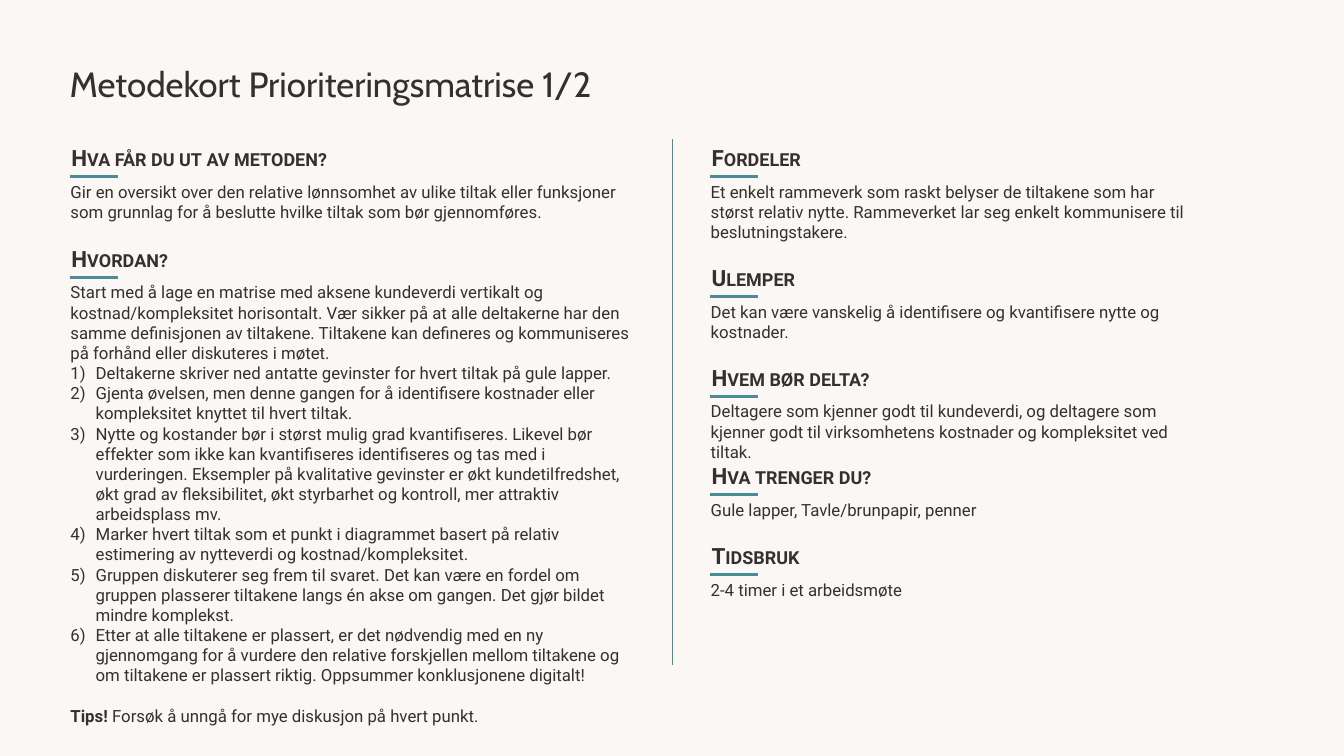
from lxml import etree
from pptx import Presentation
from pptx.dml.color import RGBColor
from pptx.enum.shapes import MSO_CONNECTOR
from pptx.enum.text import MSO_ANCHOR
from pptx.oxml.ns import qn
from pptx.util import Inches, Pt

STRAIGHT = MSO_CONNECTOR.STRAIGHT
MIDDLE = MSO_ANCHOR.MIDDLE
COLORS = {"background": "FBF7F5", "text": "333030", "accent": "4B8B95"}

LEFT_COLUMN, RIGHT_COLUMN = 0.6, 6.95
LEFT_WIDTH, RIGHT_WIDTH = 5.78, 4.91
HEADING_WIDTH, HEADING_HEIGHT = 4.91, 0.37

BENEFIT = (
    "Gir en oversikt over den relative lønnsomhet av ulike tiltak eller funksjoner "
    "som grunnlag for å beslutte hvilke tiltak som bør gjennomføres."
)
INTRO = (
    "Start med å lage en matrise med aksene kundeverdi vertikalt og "
    "kostnad/kompleksitet horisontalt. Vær sikker på at alle deltakerne har den "
    "samme definisjonen av tiltakene. Tiltakene kan defineres og kommuniseres "
    "på forhånd eller diskuteres i møtet."
)
STEPS = [
    "Deltakerne skriver ned antatte gevinster for hvert tiltak på gule lapper.",
    "Gjenta øvelsen, men denne gangen for å identifisere kostnader eller "
    "kompleksitet knyttet til hvert tiltak.",
    "Nytte og kostander bør i størst mulig grad kvantifiseres. Likevel bør "
    "effekter som ikke kan kvantifiseres identifiseres og tas med i "
    "vurderingen. Eksempler på kvalitative gevinster er økt kundetilfredshet, "
    "økt grad av fleksibilitet, økt styrbarhet og kontroll, mer attraktiv "
    "arbeidsplass mv.",
    "Marker hvert tiltak som et punkt i diagrammet basert på relativ "
    "estimering av nytteverdi og kostnad/kompleksitet.",
    "Gruppen diskuterer seg frem til svaret. Det kan være en fordel om "
    "gruppen plasserer tiltakene langs én akse om gangen. Det gjør bildet "
    "mindre komplekst.",
    "Etter at alle tiltakene er plassert, er det nødvendig med en ny "
    "gjennomgang for å vurdere den relative forskjellen mellom tiltakene og "
    "om tiltakene er plassert riktig. Oppsummer konklusjonene digitalt!",
]
RIGHT_SECTIONS = [
    (1.38, 0.71, "Fordeler",
     "Et enkelt rammeverk som raskt belyser de tiltakene som har størst relativ "
     "nytte. Rammeverket lar seg enkelt kommunisere til beslutningstakere."),
    (2.57, 0.5, "Ulemper",
     "Det kan være vanskelig å identifisere og kvantifisere nytte og kostnader."),
    (3.56, 0.5, "Hvem bør delta?",
     "Deltagere som kjenner godt til kundeverdi, og deltagere som kjenner godt "
     "til virksomhetens kostnader og kompleksitet ved tiltak."),
    (4.54, 0.3, "Hva trenger du?", "Gule lapper, Tavle/brunpapir, penner"),
    (5.33, 0.3, "Tidsbruk", "2-4 timer i et arbeidsmøte"),
]


def write(paragraph, text, size=12, font="Roboto", bold=False, small_caps=False):
    run = paragraph.add_run()
    run.text = text
    run.font.size = Pt(size)
    run.font.name = font
    run.font.bold = bold
    run.font.color.rgb = RGBColor.from_string(COLORS["text"])
    if small_caps:
        run.font._element.set("cap", "small")


def add_frame(slide, left, top, width, height):
    box = slide.shapes.add_textbox(
        Inches(left), Inches(top), Inches(width), Inches(height))
    box.text_frame.word_wrap = True
    return box.text_frame


def add_line(slide, start, end, weight):
    line = slide.shapes.add_connector(
        STRAIGHT, *(Inches(value) for value in (*start, *end)))
    line.line.color.rgb = RGBColor.from_string(COLORS["accent"])
    line.line.width = Pt(weight)
    etree.SubElement(line._element.spPr, qn("a:effectLst"))


def add_title(slide, text):
    frame = add_frame(slide, 0.69, 0.62, 11.95, 0.42)
    frame.margin_left = frame.margin_right = 0
    frame.margin_top = frame.margin_bottom = 0
    frame.vertical_anchor = MIDDLE
    frame.paragraphs[0].line_spacing = Pt(30)
    write(frame.paragraphs[0], text, size=25, font="Cabin")


def add_section(slide, left, top, width, height, heading, body):
    heading_frame = add_frame(slide, left + 0.01, top, HEADING_WIDTH, HEADING_HEIGHT)
    write(heading_frame.paragraphs[0], heading, size=16, bold=True, small_caps=True)
    body_top = top + HEADING_HEIGHT
    body_frame = add_frame(slide, left, body_top, width, height)
    write(body_frame.paragraphs[0], body)
    add_line(slide, (left + 0.09, body_top), (left + 0.57, body_top), 2.25)
    return body_frame


def add_step(frame, text):
    step = frame.add_paragraph()
    properties = step._p.get_or_add_pPr()
    properties.set("marL", str(Inches(0.25)))
    properties.set("indent", str(Inches(-0.25)))
    numbering = etree.SubElement(properties, qn("a:buAutoNum"))
    numbering.set("type", "arabicParenR")
    write(step, text)


def add_tip(frame, label, text):
    tip = frame.add_paragraph()
    tip.space_before = Pt(14.4)
    write(tip, label, bold=True)
    write(tip, text)


def main():
    deck = Presentation()
    deck.slide_width = Inches(13.33)
    deck.slide_height = Inches(7.5)
    slide = deck.slides.add_slide(deck.slide_layouts[6])
    slide.background.fill.solid()
    slide.background.fill.fore_color.rgb = RGBColor.from_string(COLORS["background"])

    add_title(slide, "Metodekort Prioriteringsmatrise 1/2")
    add_section(slide, LEFT_COLUMN, 1.38, LEFT_WIDTH, 0.5,
                "Hva får du ut av metoden?", BENEFIT)
    procedure = add_section(slide, LEFT_COLUMN, 2.38, LEFT_WIDTH, 4.14,
                            "Hvordan?", INTRO)
    for step in STEPS:
        add_step(procedure, step)
    add_tip(procedure, "Tips! ", "Forsøk å unngå for mye diskusjon på hvert punkt.")

    add_line(slide, (6.67, 1.38), (6.67, 6.6), 0.5)
    for top, height, heading, body in RIGHT_SECTIONS:
        add_section(slide, RIGHT_COLUMN, top, RIGHT_WIDTH, height, heading, body)

    deck.save("out.pptx")


if __name__ == "__main__":
    main()
